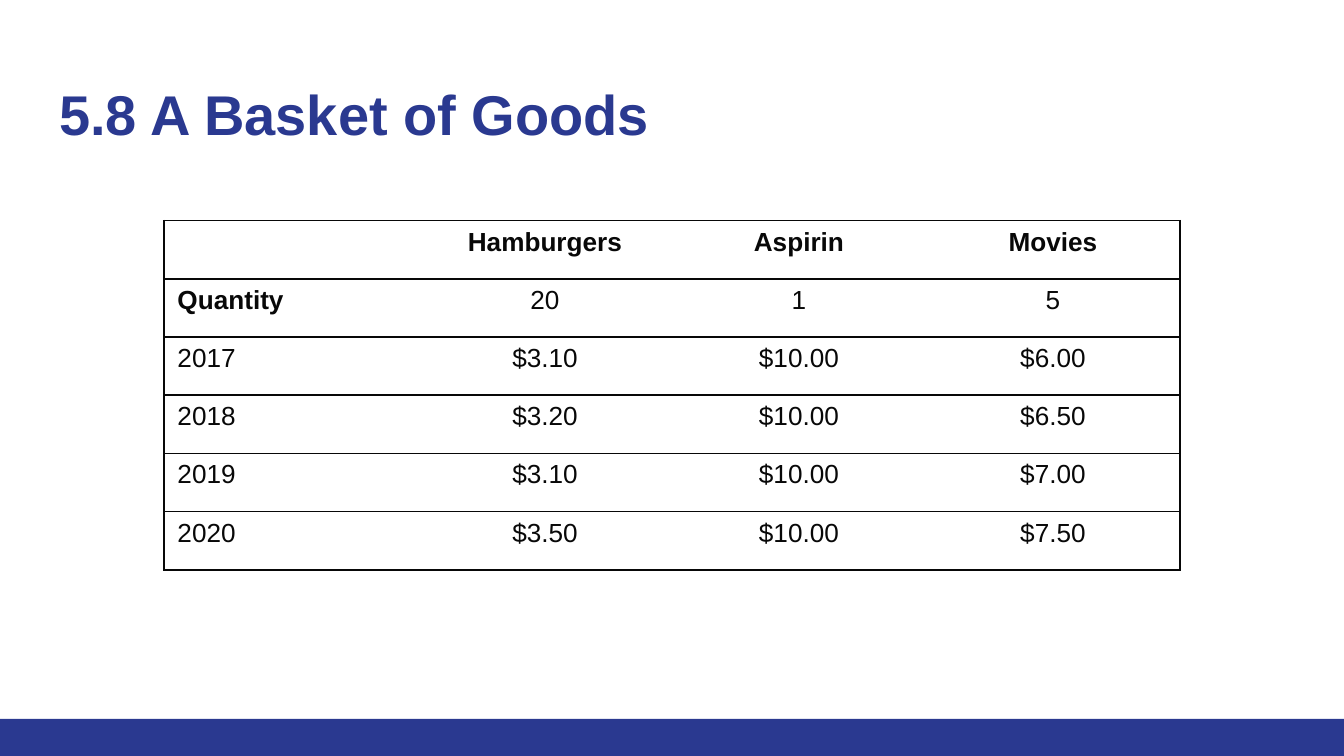
from lxml.etree import SubElement
from pptx import Presentation
from pptx.dml.color import RGBColor as RGB
from pptx.enum.shapes import MSO_SHAPE as SHAPE
from pptx.enum.text import MSO_ANCHOR as ANCHOR, PP_ALIGN as ALIGN
from pptx.oxml.ns import qn
from pptx.util import Cm, Pt

TITLE = "5.8 A Basket of Goods"
ROWS = [
    ("", "Hamburgers", "Aspirin", "Movies"),
    ("Quantity", "20", "1", "5"),
    ("2017", "$3.10", "$10.00", "$6.00"),
    ("2018", "$3.20", "$10.00", "$6.50"),
    ("2019", "$3.10", "$10.00", "$7.00"),
    ("2020", "$3.50", "$10.00", "$7.50"),
]
THEME = {
    "font": "Arial",
    "blue": "2A3990",
    "ink": "080808",
    "title": 30,
    "cell": 14,
    "rule": 1,
    "plain_table": "{2D5ABB26-0587-4C30-8999-92F81FD0307C}",
}
WIDTH, HEIGHT, BAR = 25.4, 14.29, 0.7
COL, ROW = 4.8, 1.1


def write(p, text, size, color, bold):
    """Add one formatted run to a paragraph."""
    r = p.add_run()
    r.text = text
    for name, value in {"name": THEME["font"], "size": Pt(size), "bold": bold}.items():
        setattr(r.font, name, value)
    r.font.color.rgb = RGB.from_string(color)


def add_border(cell, side):
    """Draw a solid rule on one side of a cell."""
    ln = SubElement(cell._tc.get_or_add_tcPr(), qn(f"a:ln{side}"), w=str(Pt(THEME["rule"])))
    fill = SubElement(ln, qn("a:solidFill"))
    SubElement(fill, qn("a:srgbClr"), val=THEME["ink"])


def add_bar(s):
    """Draw the band along the foot of the slide."""
    sp = s.shapes.add_shape(SHAPE.RECTANGLE, 0, Cm(HEIGHT - BAR), Cm(WIDTH), Cm(BAR))
    sp.shadow.inherit = False
    sp.fill.solid()
    sp.fill.fore_color.rgb = RGB.from_string(THEME["blue"])
    sp.line.fill.background()


def add_title(s):
    """Place the slide title."""
    tf = s.shapes.add_textbox(Cm(0.87), Cm(1.14), Cm(23.67), Cm(1.68)).text_frame
    frame = {
        "word_wrap": True,
        "vertical_anchor": ANCHOR.TOP,
        "margin_left": Cm(0.25),
        "margin_right": Cm(0.25),
        "margin_top": Cm(0.36),
        "margin_bottom": Cm(0),
    }
    for name, value in frame.items():
        setattr(tf, name, value)
    write(tf.paragraphs[0], TITLE, THEME["title"], THEME["blue"], True)


def add_prices(s):
    """Build the table of quantities and prices."""
    n_rows, n_cols = len(ROWS), len(ROWS[0])
    width = COL * n_cols
    table = s.shapes.add_table(
        n_rows, n_cols, Cm((WIDTH - width) / 2), Cm(4.17), Cm(width), Cm(ROW * n_rows)
    ).table
    table.first_row = table.horz_banding = False
    table._tbl.tblPr.find(qn("a:tableStyleId")).text = THEME["plain_table"]
    edges = {0: "LTB", n_cols - 1: "RTB"}
    for i, row in enumerate(ROWS):
        for j, text in enumerate(row):
            cell = table.cell(i, j)
            for side in edges.get(j, "TB"):
                add_border(cell, side)
            cell.fill.background()
            p = cell.text_frame.paragraphs[0]
            p.alignment = ALIGN.CENTER if j else ALIGN.LEFT
            if text:
                bold = i == 0 or text == "Quantity"
                write(p, text, THEME["cell"], THEME["ink"], bold)


def main():
    """Build and save the slide."""
    prs = Presentation()
    prs.slide_width, prs.slide_height = Cm(WIDTH), Cm(HEIGHT)
    s = prs.slides.add_slide(prs.slide_layouts[6])
    add_bar(s)
    add_title(s)
    add_prices(s)
    prs.save("out.pptx")


if __name__ == "__main__":
    main()
